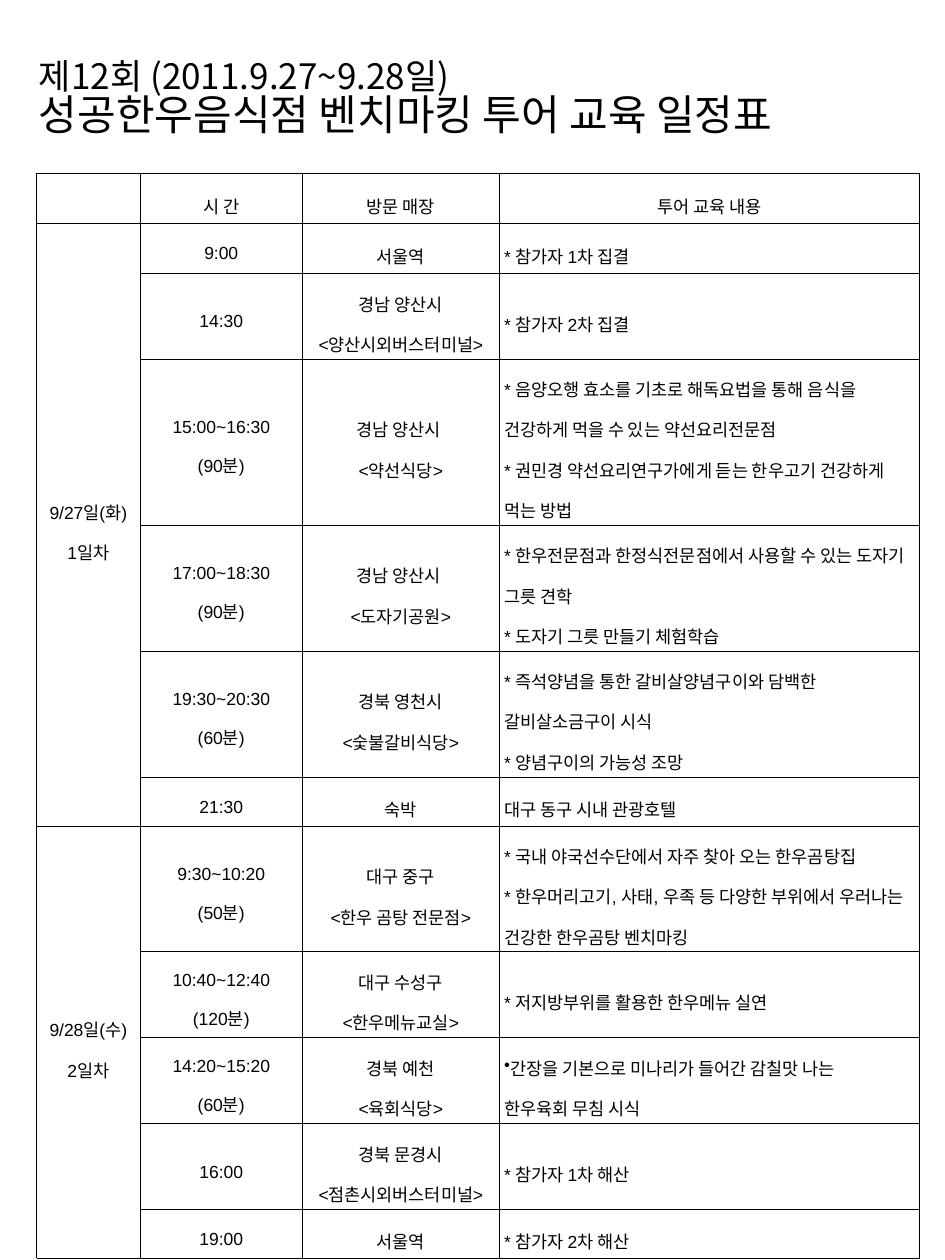
from lxml.etree import SubElement
from pptx import Presentation
from pptx.dml.color import RGBColor
from pptx.enum.text import MSO_ANCHOR, MSO_AUTO_SIZE, PP_ALIGN
from pptx.oxml.ns import qn
from pptx.util import Cm, Pt

LEFT, CENTER = PP_ALIGN.LEFT, PP_ALIGN.CENTER
MIDDLE = MSO_ANCHOR.MIDDLE
NO_FIT = MSO_AUTO_SIZE.NONE
TITLE_ONLY = 5

COLORS = {"ink": "000000"}
COLUMN_WIDTHS = [2.08, 3.28, 3.96, 8.48]
ROW_HEIGHTS = [0.99, 1.02, 0.99, 2.49, 2.49, 1.78, 0.99, 2.49, 1.73, 1.73, 1.35, 0.99]
HEADINGS = ["", "시 간", "방문 매장", "투어 교육 내용"]
DAYS = [
    ("9/27일(화)\n1일차", [
        ("9:00", "서울역", "* 참가자 1차 집결"),
        ("14:30", "경남 양산시\n<양산시외버스터미널>", "* 참가자 2차 집결"),
        ("15:00~16:30\n(90분)", "경남 양산시 \n<약선식당>",
         "* 음양오행 효소를 기초로 해독요법을 통해 음식을 건강하게 먹을 수 있는 약선요리전문점\n"
         "* 권민경 약선요리연구가에게 듣는 한우고기 건강하게 먹는 방법"),
        ("17:00~18:30\n(90분)", "경남 양산시 \n<도자기공원>",
         "* 한우전문점과 한정식전문점에서 사용할 수 있는 도자기 그릇 견학\v"
         "* 도자기 그릇 만들기 체험학습"),
        ("19:30~20:30\n(60분)", "경북 영천시\n<숯불갈비식당>",
         "* 즉석양념을 통한 갈비살양념구이와 담백한 갈비살소금구이 시식\v"
         "* 양념구이의 가능성 조망"),
        ("21:30", "숙박", "대구 동구 시내 관광호텔"),
    ]),
    ("9/28일(수)\n2일차", [
        ("9:30~10:20\n(50분)", "대구 중구\n<한우 곰탕 전문점>",
         "* 국내 야국선수단에서 자주 찾아 오는 한우곰탕집\v"
         "* 한우머리고기, 사태, 우족 등 다양한 부위에서 우러나는 건강한 한우곰탕 벤치마킹"),
        ("10:40~12:40\n(120분)", "대구 수성구\n<한우메뉴교실>", "* 저지방부위를 활용한 한우메뉴 실연"),
        ("14:20~15:20\n(60분)", "경북 예천\n<육회식당>",
         "•간장을 기본으로 미나리가 들어간 감칠맛 나는\n한우육회 무침 시식"),
        ("16:00", "경북 문경시\n<점촌시외버스터미널>", "* 참가자 1차 해산"),
        ("19:00", "서울역", "* 참가자 2차 해산"),
    ]),
]


class SchedulePage:
    title_font = "Noto Sans CJK KR"
    body_font = "Arial"
    body_size = 10
    border = Pt(0.28)

    def __init__(self, deck):
        self.page = deck.slides.add_slide(deck.slide_layouts[TITLE_ONLY])

    def format_para(self, para, font, sizes, align, spacing):
        para.alignment = align
        para.line_spacing = spacing
        for line_break in para._p.findall(qn("a:br")):
            SubElement(line_break, qn("a:rPr"), sz=str(sizes[0] * 100))
        for index, span in enumerate(para.runs):
            span.font.name = font
            span.font.size = Pt(sizes[min(index, len(sizes) - 1)])
            span.font.color.rgb = RGBColor.from_string(COLORS["ink"])

    def title(self, text, sizes, left, top, width, height):
        box = self.page.shapes.title
        box.left, box.top, box.width, box.height = Cm(left), Cm(top), Cm(width), Cm(height)
        frame = box.text_frame
        frame.auto_size = NO_FIT
        frame.word_wrap = True
        frame.vertical_anchor = MIDDLE
        para = frame.paragraphs[0]
        para.text = text
        self.format_para(para, self.title_font, sizes, LEFT, 0.85)

    def table(self, left, top, widths, heights):
        frame = self.page.shapes.add_table(
            len(heights), len(widths), Cm(left), Cm(top), Cm(sum(widths)), Cm(sum(heights)))
        table = frame.table
        table.first_row = table.horz_banding = False
        for column, width in zip(table.columns, widths):
            column.width = Cm(width)
        for row, height in zip(table.rows, heights):
            row.height = Cm(height)
        for cell in table.iter_cells():
            self.frame_cell(cell)
        return table

    def frame_cell(self, cell):
        cell.vertical_anchor = MIDDLE
        cell.margin_left = cell.margin_right = Cm(0.1)
        cell.margin_top = cell.margin_bottom = Cm(0.05)
        properties = cell._tc.get_or_add_tcPr()
        for side in ("lnL", "lnR", "lnT", "lnB"):
            line = SubElement(properties, qn("a:" + side), w=str(self.border))
            fill = SubElement(line, qn("a:solidFill"))
            SubElement(fill, qn("a:srgbClr"), val=COLORS["ink"])
        cell.fill.background()

    def write_cell(self, cell, text, align):
        cell.text_frame.text = text
        for para in cell.text_frame.paragraphs:
            if para.text.startswith("•"):
                para.text = para.text[1:]
                SubElement(para._p.get_or_add_pPr(), qn("a:buChar"), char="•")
            para.font.size = Pt(self.body_size)
            self.format_para(para, self.body_font, [self.body_size], align, 1.6)


def main():
    deck = Presentation()
    deck.slide_width, deck.slide_height = Cm(19.05), Cm(25.4)
    schedule = SchedulePage(deck)
    schedule.title("제12회 (2011.9.27~9.28일)\v성공한우음식점 벤치마킹 투어 교육 일정표",
                   [20, 24], 0.53, -0.1, 17.8, 4.24)
    table = schedule.table(0.74, 3.5, COLUMN_WIDTHS, ROW_HEIGHTS)
    for column, heading in enumerate(HEADINGS):
        schedule.write_cell(table.cell(0, column), heading, CENTER)
    row = 1
    for day, visits in DAYS:
        table.cell(row, 0).merge(table.cell(row + len(visits) - 1, 0))
        schedule.write_cell(table.cell(row, 0), day, CENTER)
        for visit in visits:
            for column, text in enumerate(visit, 1):
                schedule.write_cell(table.cell(row, column), text, LEFT if column == 3 else CENTER)
            row += 1
    deck.save("out.pptx")


if __name__ == "__main__":
    main()
